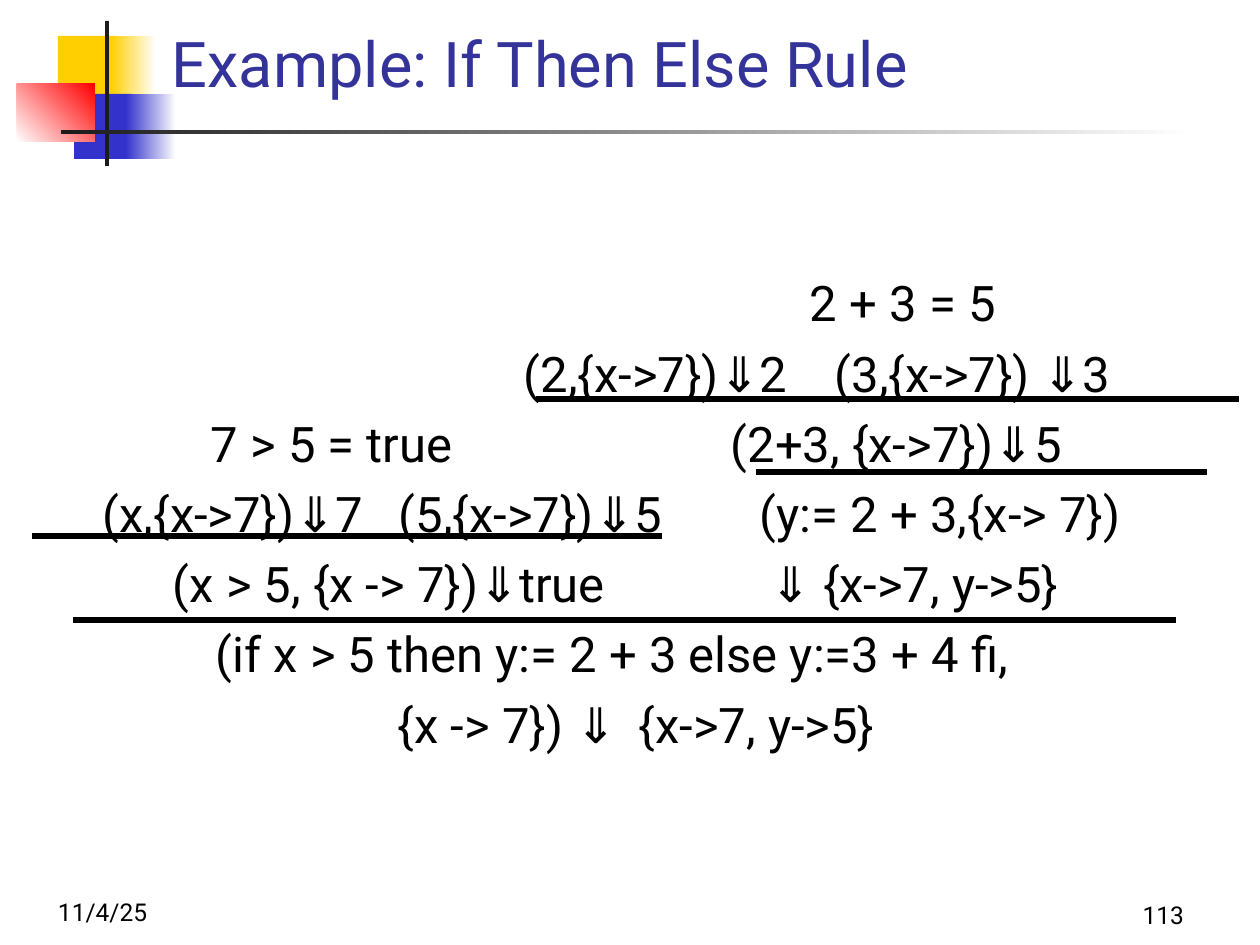
from lxml import etree
from pptx import Presentation
from pptx import util as u
from pptx.dml.color import RGBColor
from pptx.enum import shapes, text
from pptx.oxml.ns import qn

PX = 914400 // 126
C = {"gold": "FFCF01", "blue": "3333CC", "red": "FF0000", "dark": "1C1C1C",
     "white": "FFFFFF", "title": "333399", "black": "000000"}

prs = Presentation()
prs.slide_width, prs.slide_height = u.Inches(10), u.Inches(7.5)
s = prs.slides.add_slide(prs.slide_layouts[6])


def add_text(box, lines, size, color, align=text.PP_ALIGN.LEFT,
             anchor=text.MSO_ANCHOR.BOTTOM, inset=13, tabs=None):
    tf = s.shapes.add_textbox(*[v * PX for v in box]).text_frame
    frame = {"word_wrap": True, "vertical_anchor": anchor,
             "margin_left": inset * PX, "margin_right": inset * PX,
             "margin_top": 6 * PX, "margin_bottom": 6 * PX}
    for name, value in frame.items():
        setattr(tf, name, value)
    for i, line in enumerate(lines):
        p = tf.add_paragraph() if i else tf.paragraphs[0]
        p.alignment = align
        if i:
            p.space_before = u.Pt(6.5)
        if tabs:
            tab_list = etree.SubElement(p._p.get_or_add_pPr(), qn("a:tabLst"))
            for x in tabs[i]:
                etree.SubElement(tab_list, qn("a:tab"), pos=str(x * PX), algn="l")
        r = p.add_run()
        r.text = line
        for name, value in {"name": "Roboto", "size": u.Pt(size)}.items():
            setattr(r.font, name, value)
        r.font.color.rgb = RGBColor.from_string(C[color])


# Corner ornament: box, colours (two make a gradient), angle
ornament = [
    ((58, 36, 60, 65), ["gold"], 0),
    ((111, 36, 45, 65), ["gold", "white"], 0),
    ((74, 94, 58, 65), ["blue"], 0),
    ((126, 94, 50, 65), ["blue", "white"], 0),
    ((17, 84, 78, 58), ["white", "red"], 45),
    ((105, 21, 4, 145), ["dark"], 0),
    ((61, 130, 1134, 4), ["dark", "white"], 0),
]
for box, colors, angle in ornament:
    sp = s.shapes.add_shape(shapes.MSO_SHAPE.RECTANGLE, *[v * PX for v in box])
    sp.shadow.inherit = False
    sp.line.fill.background()
    if len(colors) == 1:
        sp.fill.solid()
        sp.fill.fore_color.rgb = RGBColor.from_string(C[colors[0]])
    else:
        sp.fill.gradient()
        sp.fill.gradient_angle = angle
        for stop, pos, color in zip(sp.fill.gradient_stops, (0, 1), colors):
            stop.position = pos
            stop.color.rgb = RGBColor.from_string(C[color])

# Footer and title
add_text((45, 869, 262, 63), ["11/4/25"], 14, "black")
add_text((935, 872, 262, 63), ["113"], 14, "black", text.PP_ALIGN.RIGHT)
add_text((159, 23, 1074, 83), ["Example: If Then Else Rule"], 36, "title")

# Derivation tree: each row holds (left edge, expression) pairs set on tab stops
rows = [
    [(810, "2 + 3 = 5")],
    [(524, "(2,{x->7})⇓2"), (835, "(3,{x->7}) ⇓3")],
    [(211, "7 > 5 = true"), (731, "(2+3, {x->7})⇓5")],
    [(103, "(x,{x->7})⇓7"), (399, "(5,{x->7})⇓5"), (760, "(y:= 2 + 3,{x-> 7})")],
    [(173, "(x > 5, {x -> 7})⇓true"), (770, "⇓ {x->7, y->5}")],
    [(216, "(if x > 5 then y:= 2 + 3 else y:=3 + 4 fi,")],
    [(398, "{x -> 7}) ⇓"), (639, "{x->7, y->5}")],
]
add_text((0, 267, 1228, 635),
         ["".join("\t" + expr for _, expr in row) for row in rows],
         28, "black", anchor=text.MSO_ANCHOR.TOP, inset=0,
         tabs=[[x for x, _ in row] for row in rows])

# Inference bars
for x1, x2, y in [(73, 1176, 620), (32, 662, 536), (756, 1207, 472), (536, 1239, 399)]:
    bar = s.shapes.add_connector(shapes.MSO_CONNECTOR.STRAIGHT,
                                 x1 * PX, y * PX, x2 * PX, y * PX)
    bar.line.width = u.Pt(3)
    bar.line.color.rgb = RGBColor.from_string(C["black"])
    etree.SubElement(bar._element.spPr, qn("a:effectLst"))

prs.save("out.pptx")
